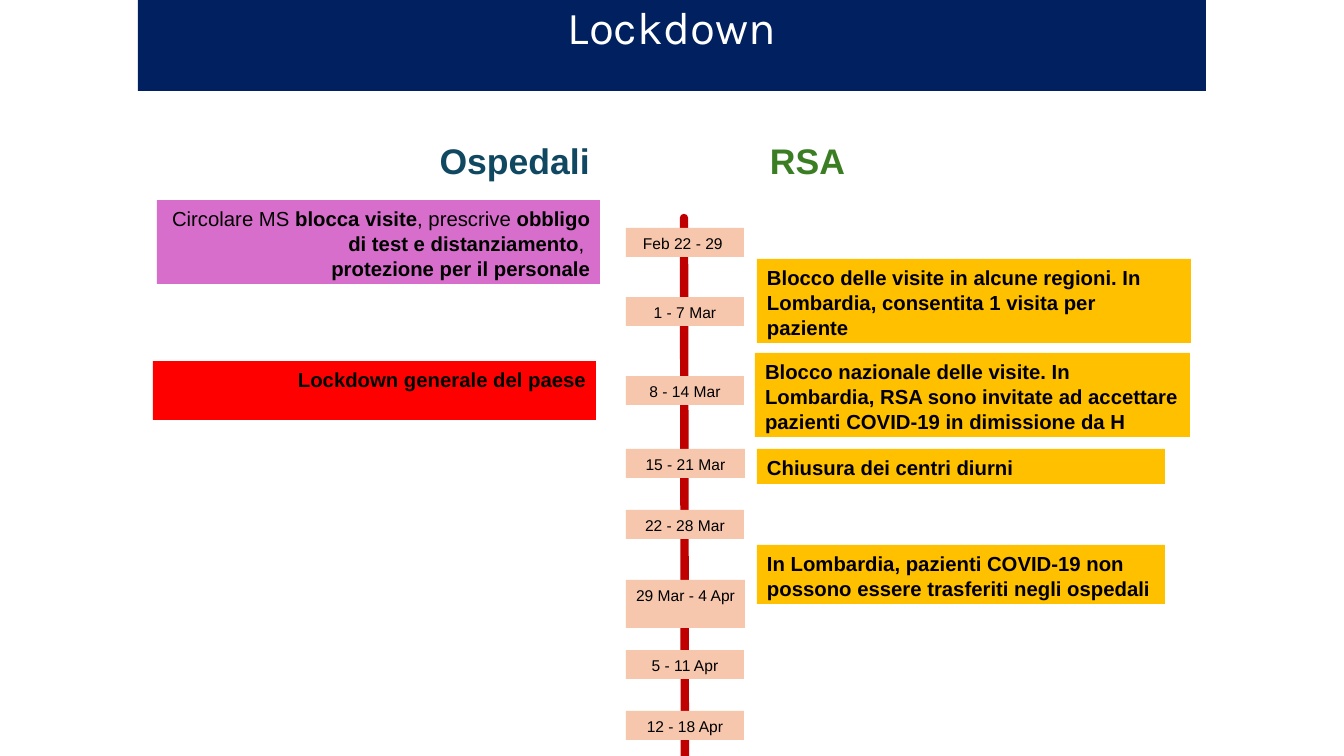
"""Builds the Lockdown timeline slide for hospitals and care homes."""
from dataclasses import dataclass

from lxml.etree import SubElement
from pptx import Presentation
from pptx.dml.color import RGBColor as Rgb
from pptx.enum.shapes import MSO_CONNECTOR as Link, MSO_SHAPE as Kind
from pptx.enum.text import MSO_ANCHOR as Anchor, MSO_AUTO_SIZE as Fit, PP_ALIGN as Align
from pptx.oxml.ns import qn
from pptx.util import Emu, Pt

SCALE = 914400 / 100.8
COLORS = {
    "white": "FFFFFF", "black": "000000", "navy": "002060", "teal": "104862",
    "green": "3B7D23", "peach": "F6C6AD", "pink": "D86ECC", "red": "FF0000",
    "gold": "FFC000", "spine": "C00000",
}
Run = tuple[str, bool]


@dataclass
class Box:
    """Place and look of one block of text."""
    left: int
    top: int
    width: int
    height: int
    paras: list[list[Run]]
    fill: str = ""
    color: str = "black"
    size: float = 14.5
    align: Align = Align.LEFT
    font: str = "Arial"
    lead: float = 1.045


@dataclass
class Week:
    """One step on the timeline."""
    text: str
    top: int
    width: int = 118
    height: int = 29


TITLE = Box(138, 0, 1068, 91, [[("Lockdown", False)]], "navy", "white", 32.6,
            Align.CENTER, "Karla", 0.9)
HEADS = [
    Box(355, 132, 245, 53, [[("Ospedali", True)]], "", "teal", 25.4, Align.RIGHT),
    Box(760, 132, 384, 53, [[("RSA", True)]], "", "green", 25.4),
]
WEEKS = [
    Week("Feb 22 - 29 ", 228),
    Week("1 - 7 Mar", 297),
    Week("8 - 14 Mar", 376),
    Week("15 - 21 Mar", 449, 119),
    Week("22 - 28 Mar", 510),
    Week("29 Mar - 4 Apr", 580, 119, 48),
    Week("5 - 11 Apr", 650),
    Week("12 - 18 Apr", 711),
]
NOTES = [
    Box(157, 200, 443, 84, [
        [("Circolare MS ", False), ("blocca visite", True), (", prescrive ", False),
         ("obbligo di test e distanziamento", True), (", ", False)],
        [("protezione per il personale", True)],
    ], "pink", align=Align.RIGHT),
    Box(153, 361, 443, 59, [[("Lockdown generale del paese", True)]], "red",
        align=Align.RIGHT),
    Box(757, 259, 434, 84, [[("Blocco delle visite in alcune regioni. In Lombardia, "
                              "consentita 1 visita per paziente", True)]], "gold"),
    Box(755, 353, 435, 84, [[("Blocco nazionale delle visite. In Lombardia, RSA sono "
                              "invitate ad accettare pazienti COVID-19 in dimissione "
                              "da H", True)]], "gold"),
    Box(757, 449, 408, 35, [[("Chiusura dei centri diurni", True)]], "gold"),
    Box(757, 545, 408, 59, [[("In Lombardia, pazienti COVID-19 non possono essere "
                              "trasferiti negli ospedali", True)]], "gold"),
]


def px(count: int) -> Emu:
    """Turn px into EMU."""
    return Emu(round(count * SCALE))


def tint(name: str) -> Rgb:
    """Look up a colour by name."""
    return Rgb.from_string(COLORS[name])


def place(box: Box) -> list[Emu]:
    """Give left, top, width and height in EMU."""
    return [px(side) for side in (box.left, box.top, box.width, box.height)]


def write(shape, box: Box) -> None:
    """Fill a shape with the text of a box."""
    frame = shape.text_frame
    frame.word_wrap = True
    frame.auto_size = Fit.NONE
    frame.vertical_anchor = Anchor.TOP
    frame.margin_left = frame.margin_right = px(10)
    frame.margin_top = frame.margin_bottom = px(5)
    for index, runs in enumerate(box.paras):
        para = frame.add_paragraph() if index else frame.paragraphs[0]
        para.alignment = box.align
        para.line_spacing = box.lead
        para.space_before = Pt(0)
        font = para.font
        font.name, font.size = box.font, Pt(box.size)
        font.color.rgb = tint(box.color)
        flags = {bold for _, bold in runs}
        if len(flags) == 1:
            font.bold = flags.pop()
        for text, bold in runs:
            run = para.add_run()
            run.text = text
            if font.bold is None:
                run.font.bold = bold


def paint(shape, name: str) -> None:
    """Give a shape a plain fill."""
    shape.fill.solid()
    shape.fill.fore_color.rgb = tint(name)
    shape.line.fill.background()


def draw_title(slide, box: Box) -> None:
    """Move and format the title placeholder."""
    shape = slide.shapes.title
    shape.left, shape.top, shape.width, shape.height = place(box)
    paint(shape, box.fill)
    write(shape, box)


def draw_box(slide, box: Box) -> None:
    """Draw a filled box or a bare heading."""
    if box.fill:
        shape = slide.shapes.add_shape(Kind.RECTANGLE, *place(box))
        shape.shadow.inherit = False
        paint(shape, box.fill)
    else:
        shape = slide.shapes.add_textbox(*place(box))
    write(shape, box)


def draw_week(slide, week: Week) -> None:
    """Draw one date on the timeline."""
    draw_box(slide, Box(626, week.top, week.width, week.height,
                        [[(week.text, False)]], "peach", size=11.1,
                        align=Align.CENTER))


def draw_spine(slide) -> None:
    """Draw the round-ended line of the timeline."""
    spine = slide.shapes.add_connector(Link.STRAIGHT, px(685), px(798), px(684), px(218))
    spine.line.color.rgb = tint("spine")
    spine.line.width = Pt(6)
    props = spine.element.spPr
    props.find(qn("a:ln")).set("cap", "rnd")
    SubElement(props, qn("a:effectLst"))


def main() -> None:
    """Build and save the slide."""
    deck = Presentation()
    deck.slide_width, deck.slide_height = px(1344), px(756)
    slide = deck.slides.add_slide(deck.slide_layouts.get_by_name("Title Only"))
    draw_title(slide, TITLE)
    draw_spine(slide)
    for week in WEEKS:
        draw_week(slide, week)
    for box in HEADS + NOTES:
        draw_box(slide, box)
    deck.save("out.pptx")


if __name__ == "__main__":
    main()
